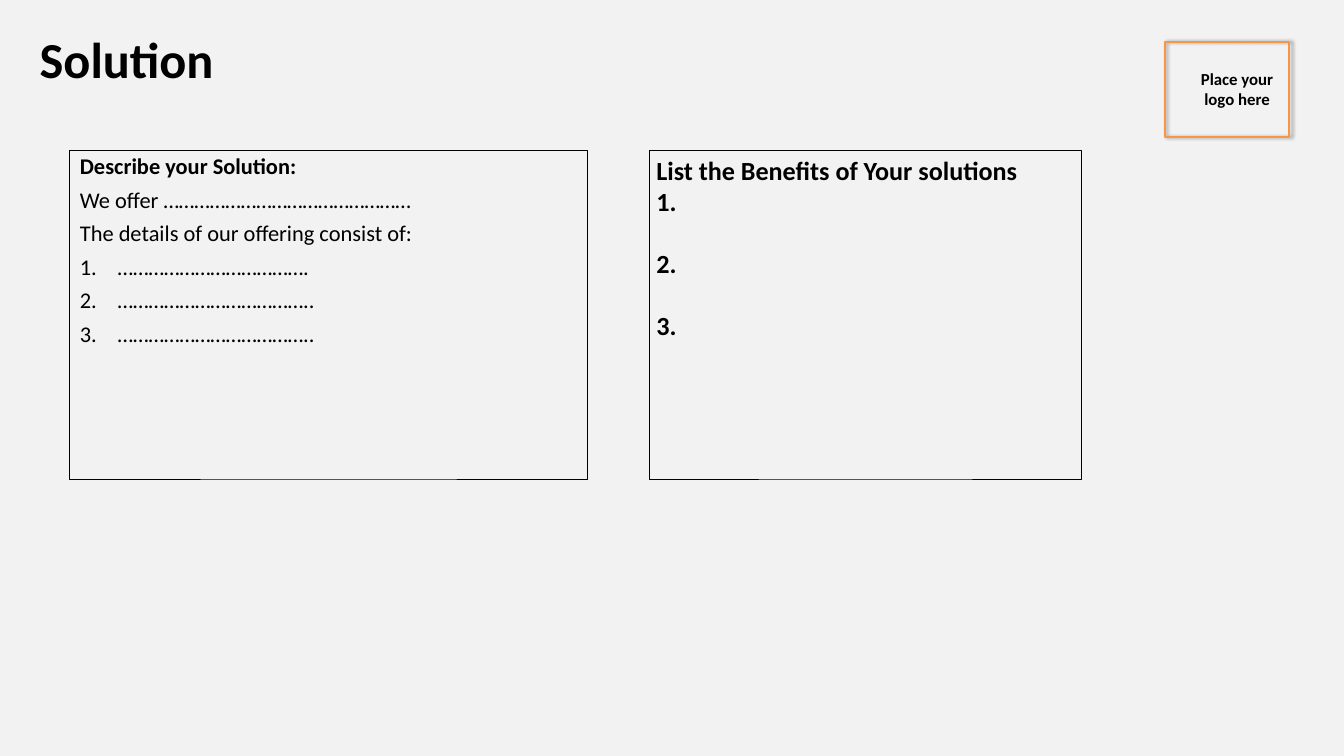
import pptx
import pptx.util
import pptx.dml.color
import pptx.enum.shapes
import pptx.enum.text
import pptx.oxml
import pptx.oxml.ns

Cm = pptx.util.Cm
Pt = pptx.util.Pt
COLORS = {"background": "F2F2F2", "ink": "000000", "logo_frame": "F79646"}


def rgb(name):
    return pptx.dml.color.RGBColor.from_string(COLORS[name])


def fill_text(shape, lines, size, inset_x, inset_y):
    """Set the insets and write one bold paragraph per line; return the paragraphs."""
    frame = shape.text_frame
    frame.word_wrap = True
    frame.vertical_anchor = pptx.enum.text.MSO_ANCHOR.TOP
    frame.margin_left = frame.margin_right = Cm(inset_x)
    frame.margin_top = frame.margin_bottom = Cm(inset_y)
    frame.text = "\n".join(lines)
    for paragraph in frame.paragraphs:
        paragraph.alignment = pptx.enum.text.PP_ALIGN.LEFT
        paragraph.font.name = "Calibri"
        paragraph.font.size = Pt(size)
        paragraph.font.bold = True
        paragraph.font.color.rgb = rgb("ink")
    return frame.paragraphs


presentation = pptx.Presentation()
presentation.slide_width = Cm(50.8)
presentation.slide_height = Cm(28.58)
slide = presentation.slides.add_slide(presentation.slide_layouts[6])
slide.background.fill.solid()
slide.background.fill.fore_color.rgb = rgb("background")

# Title
title = slide.shapes.add_textbox(Cm(1.12), Cm(0.08), Cm(31.52), Cm(3.28))
title_paragraph = fill_text(title, ["Solution"], 54, 0.38, 0.18)[0]
title_paragraph.line_spacing = Pt(87.5)

# Logo label
logo_label = slide.shapes.add_textbox(Cm(44.78), Cm(2.51), Cm(3.96), Cm(1.73))
label_paragraph = fill_text(logo_label, ["Place your logo here"], 18, 0.18, 0.1)[0]
label_paragraph.alignment = pptx.enum.text.PP_ALIGN.CENTER

# Outlined boxes
boxes = {}
for name, left, top, width, height, line_color, line_width in [
    ("solution", 2.64, 5.69, 19.58, 12.42, "ink", 0.75),
    ("logo", 44.02, 1.6, 4.7, 3.58, "logo_frame", 2),
    ("benefits", 24.56, 5.69, 16.31, 12.42, "ink", 0.75),
]:
    box = slide.shapes.add_shape(
        pptx.enum.shapes.MSO_SHAPE.RECTANGLE, Cm(left), Cm(top), Cm(width), Cm(height)
    )
    box.shadow.inherit = False
    box.fill.background()
    box.line.color.rgb = rgb(line_color)
    box.line.width = Pt(line_width)
    boxes[name] = box

# Soft shadow to the right of the logo frame
effects = boxes["logo"].element.spPr.find(pptx.oxml.ns.qn("a:effectLst"))
effects.append(pptx.oxml.parse_xml(
    f'<a:outerShdw {pptx.oxml.ns.nsdecls("a")} blurRad="{Pt(4)}" dist="{Pt(3)}" dir="0">'
    f'<a:srgbClr val="{COLORS["ink"]}"><a:alpha val="40000"/></a:srgbClr></a:outerShdw>'
))

# Solution description: heading, two sentences, numbered list
solution_lines = [
    "Describe your Solution:",
    "We offer …………………………………………",
    "The details of our offering consist of:",
    "……………………………….",
    "………………………………..",
    "………………………………..",
]
for index, paragraph in enumerate(fill_text(boxes["solution"], solution_lines, 24, 0.38, 0.18)):
    paragraph.line_spacing = 0.9
    paragraph.space_before = Pt(10)
    paragraph.font.bold = index == 0
    if index >= 3:
        properties = paragraph._p.get_or_add_pPr()
        properties.set("marL", str(Cm(1.43)))
        properties.set("indent", str(-Cm(1.43)))
        numbering = pptx.oxml.parse_xml(
            f'<a:buAutoNum {pptx.oxml.ns.nsdecls("a")} type="arabicPeriod"/>'
        )
        properties.find(pptx.oxml.ns.qn("a:spcBef")).addnext(numbering)

# Benefits: heading and three numbers with room to write between them
benefit_lines = ["List the Benefits of Your solutions", "1.", "2.", "3."]
benefit_paragraphs = fill_text(boxes["benefits"], benefit_lines, 28, 0.25, 0.13)
for paragraph in benefit_paragraphs[2:]:
    paragraph.space_before = Pt(33)

presentation.save("out.pptx")
